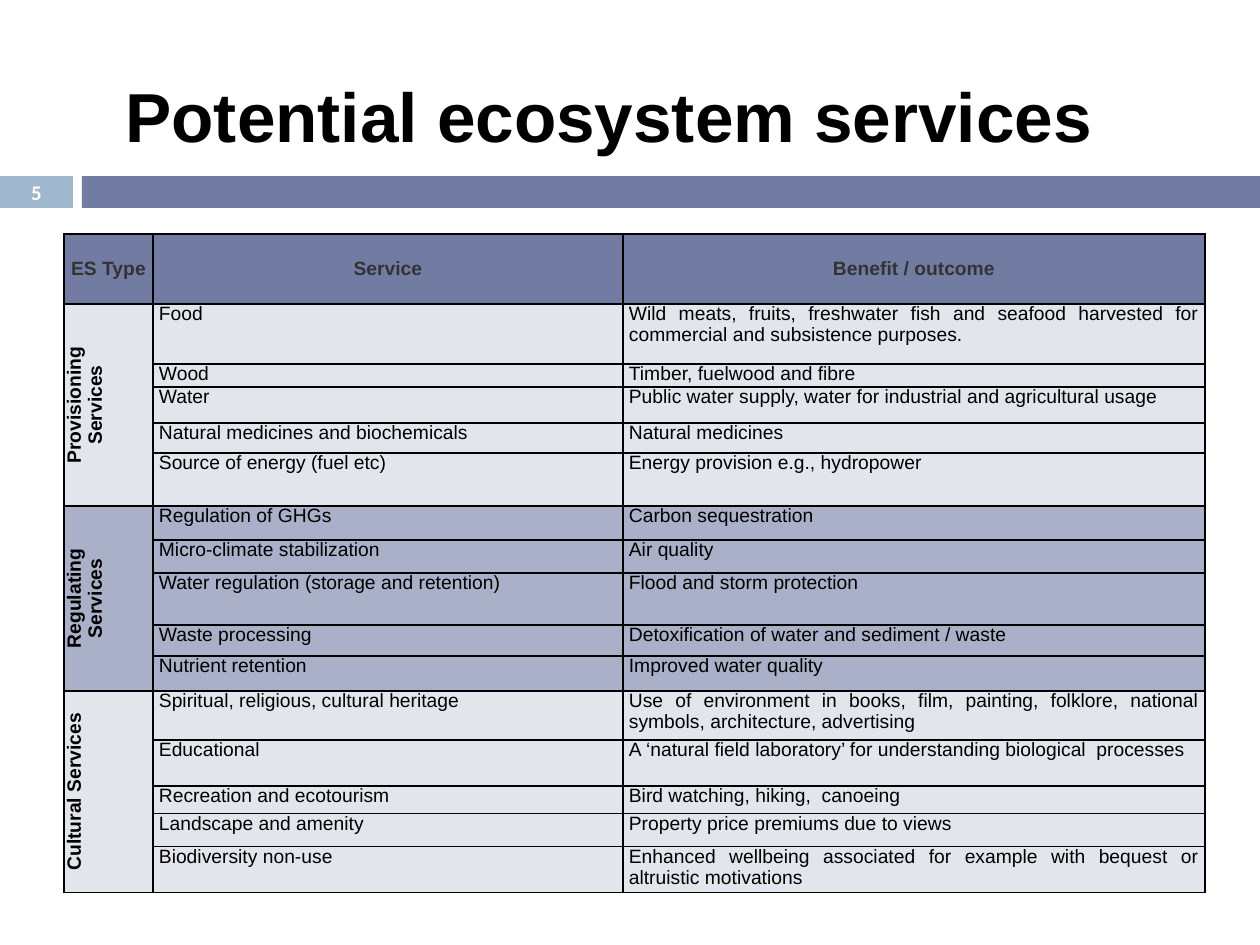
import pptx
import pptx.util
import pptx.dml.color
import pptx.enum.shapes
import pptx.enum.text
import pptx.oxml.ns
from lxml import etree

EMU_PER_PX = 914400 / 126
COLORS = {
    "black": "000000", "white": "FFFFFF", "heading": "333333",
    "band": "727CA3", "tag": "9FB8CD", "light": "E3E5ED", "dark": "AAB0C8",
}
ALIGN = pptx.enum.text.PP_ALIGN
ANCHOR = pptx.enum.text.MSO_ANCHOR

COLUMN_WIDTHS = [89, 470, 582]
HEADINGS = ["ES Type", "Service", "Benefit / outcome"]
HEADING_HEIGHT = 70
# Each group: name, fill, rows of (height, service, benefit)
GROUPS = [
    ("Provisioning Services", "light", [
        (60, "Food", "Wild meats, fruits, freshwater fish and seafood harvested "
                     "for commercial and subsistence purposes."),
        (23, "Wood", "Timber, fuelwood and fibre"),
        (36, "Water", "Public water supply, water for industrial and agricultural usage"),
        (30, "Natural medicines and biochemicals", "Natural medicines"),
        (52, "Source of energy (fuel etc)", "Energy provision e.g., hydropower"),
    ]),
    ("Regulating Services", "dark", [
        (34, "Regulation of GHGs", "Carbon sequestration"),
        (33, "Micro-climate stabilization", "Air quality"),
        (52, "Water regulation (storage and retention)", "Flood and storm protection"),
        (31, "Waste processing", "Detoxification of water and sediment / waste"),
        (35, "Nutrient retention", "Improved water quality"),
    ]),
    ("Cultural Services", "light", [
        (49, "Spiritual, religious, cultural heritage",
         "Use of environment in books, film, painting, folklore, national "
         "symbols, architecture, advertising"),
        (46, "Educational",
         "A ‘natural field laboratory’ for understanding biological  processes"),
        (28, "Recreation and ecotourism", "Bird watching, hiking,  canoeing"),
        (33, "Landscape and amenity", "Property price premiums due to views"),
        (46, "Biodiversity non-use", "Enhanced wellbeing associated for example "
                                     "with bequest or altruistic motivations"),
    ]),
]


def px(n):
    return pptx.util.Emu(round(n * EMU_PER_PX))


def rgb(name):
    return pptx.dml.color.RGBColor.from_string(COLORS[name])


def set_attrs(target, values):
    for name, value in values.items():
        setattr(target, name, value)


def write(p, text, size, color="black", bold=True, font="Arial", align=ALIGN.CENTER):
    p.alignment = align
    r = p.add_run()
    r.text = text
    set_attrs(r.font, {"name": font, "size": pptx.util.Pt(size), "bold": bold})
    r.font.color.rgb = rgb(color)


def add_bar(s, box, color):
    sp = s.shapes.add_shape(pptx.enum.shapes.MSO_SHAPE.RECTANGLE, *map(px, box))
    sp.shadow.inherit = False
    sp.fill.solid()
    sp.fill.fore_color.rgb = rgb(color)
    sp.line.fill.background()


def add_label(s, box, text, size, anchor=ANCHOR.MIDDLE, top=0, right=0, **style):
    tf = s.shapes.add_textbox(*map(px, box)).text_frame
    set_attrs(tf, {"word_wrap": True, "vertical_anchor": anchor,
                   "margin_left": 0, "margin_right": px(right),
                   "margin_top": px(top), "margin_bottom": 0})
    write(tf.paragraphs[0], text, size, **style)


def add_borders(cell):
    tc_pr = cell._tc.get_or_add_tcPr()
    qn = pptx.oxml.ns.qn
    for side in ("lnL", "lnR", "lnT", "lnB"):
        ln = etree.SubElement(tc_pr, qn("a:" + side), w=str(pptx.util.Pt(1)))
        fill = etree.SubElement(ln, qn("a:solidFill"))
        etree.SubElement(fill, qn("a:srgbClr"), val=COLORS["black"])


def fill_cell(cell, text, fill, anchor=ANCHOR.TOP, vertical=False, **style):
    add_borders(cell)
    cell.fill.solid()
    cell.fill.fore_color.rgb = rgb(fill)
    set_attrs(cell, {"margin_left": px(6), "margin_right": px(6),
                     "margin_top": 0, "margin_bottom": 0, "vertical_anchor": anchor})
    if vertical:
        cell._tc.get_or_add_tcPr().set("vert", "vert270")
    p = cell.text_frame.paragraphs[0]
    p.line_spacing = pptx.util.Pt(12)
    if text:
        write(p, text, 11, **style)


def add_services_table(s, left, top):
    heights = [HEADING_HEIGHT] + [row[0] for group in GROUPS for row in group[2]]
    box = (left, top, sum(COLUMN_WIDTHS), sum(heights))
    table = s.shapes.add_table(len(heights), len(COLUMN_WIDTHS), *map(px, box)).table
    for column, width in zip(table.columns, COLUMN_WIDTHS):
        column.width = px(width)
    for row, height in zip(table.rows, heights):
        row.height = px(height)

    for c, heading in enumerate(HEADINGS):
        fill_cell(table.cell(0, c), heading, "band", ANCHOR.MIDDLE, color="heading")

    first = 1
    for name, fill, rows in GROUPS:
        last = first + len(rows) - 1
        for r, (_, service, benefit) in enumerate(rows, first):
            fill_cell(table.cell(r, 0), name if r == first else "", fill,
                      vertical=r == first)
            for c, text in enumerate((service, benefit), 1):
                fill_cell(table.cell(r, c), text, fill, bold=False, align=ALIGN.JUSTIFY)
        table.cell(first, 0).merge(table.cell(last, 0))
        first = last + 1


def main():
    prs = pptx.Presentation()
    prs.slide_width, prs.slide_height = px(1260), px(945)
    s = prs.slides.add_slide(prs.slide_layouts[6])

    # Band under the title
    add_bar(s, (0, 176, 73, 32), "tag")
    add_bar(s, (82, 176, 1178, 32), "band")

    # Title, table and slide number
    add_label(s, (63, 45, 1134, 89), "Potential ecosystem services", 39.6,
              anchor=ANCHOR.TOP, top=28, right=42)
    add_services_table(s, 64, 234)
    add_label(s, (0, 175, 73, 34), "5", 11.9, color="white", font="Calibri")

    prs.save("out.pptx")


if __name__ == "__main__":
    main()
